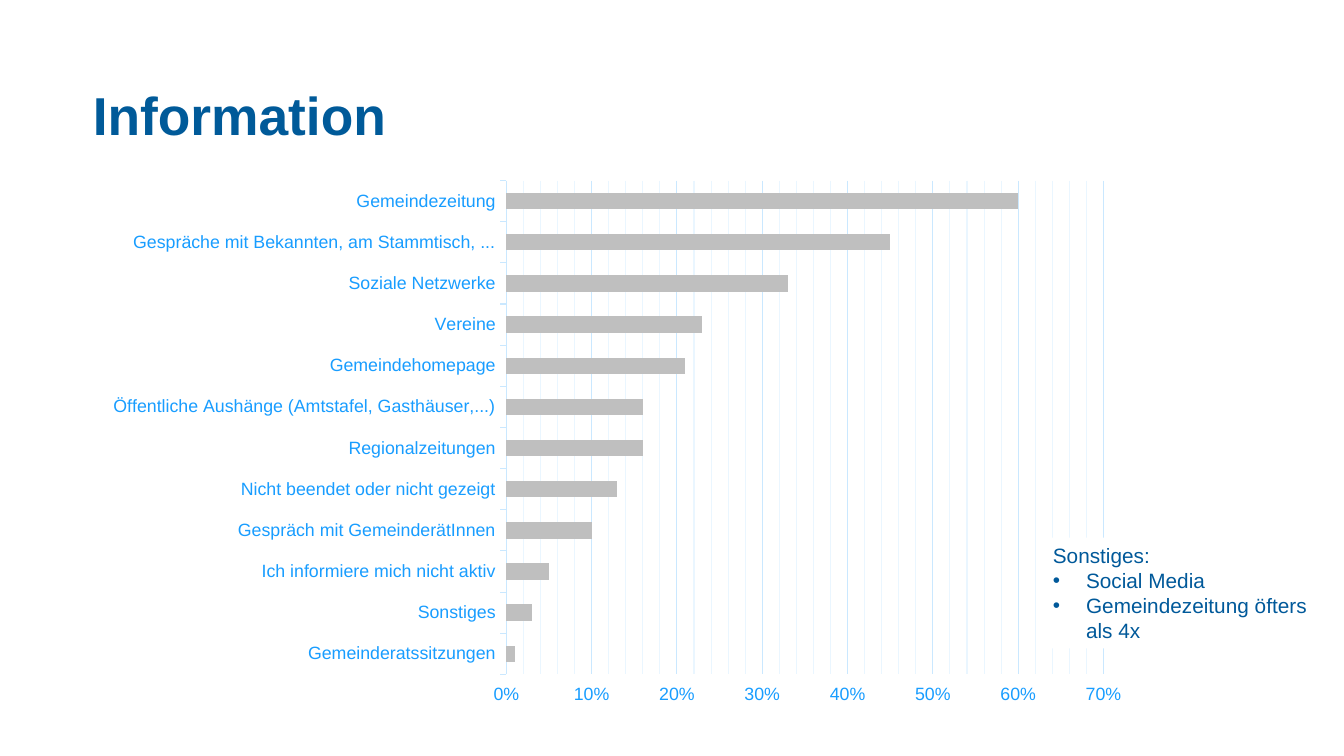
from lxml import etree
from pptx import Presentation
from pptx.chart.data import CategoryChartData
from pptx.dml.color import RGBColor
from pptx.enum.chart import XL_CHART_TYPE, XL_TICK_MARK
from pptx.enum.shapes import MSO_SHAPE
from pptx.enum.text import MSO_ANCHOR, PP_ALIGN
from pptx.oxml import parse_xml
from pptx.oxml.ns import nsdecls, qn
from pptx.util import Cm, Pt

BAR_STACKED = XL_CHART_TYPE.BAR_STACKED
TICK_OUT, TICK_NONE = XL_TICK_MARK.OUTSIDE, XL_TICK_MARK.NONE
RECT = MSO_SHAPE.RECTANGLE
TOP, LEFT = MSO_ANCHOR.TOP, PP_ALIGN.LEFT

FONT = "Arial"
COLORS = {
    "title": "005A99",
    "text": "00599A",
    "axis": "189DFF",
    "grid": "CAE8FF",
    "minor_grid": "EAF6FF",
    "bar": "BFBFBF",
    "white": "FFFFFF",
}

# Information sources from the bottom bar to the top bar
SOURCES = [
    ("Gemeinderatssitzungen", 0.01),
    ("Sonstiges", 0.03),
    ("Ich informiere mich nicht aktiv", 0.05),
    ("Gespräch mit GemeinderätInnen", 0.1),
    ("Nicht beendet oder nicht gezeigt", 0.13),
    ("Regionalzeitungen", 0.16),
    ("Öffentliche Aushänge (Amtstafel, Gasthäuser,...)", 0.16),
    ("Gemeindehomepage", 0.21),
    ("Vereine", 0.23),
    ("Soziale Netzwerke", 0.33),
    ("Gespräche mit Bekannten, am Stammtisch, ...", 0.45),
    ("Gemeindezeitung", 0.6),
]
OTHER_ANSWERS = ["Social Media", "Gemeindezeitung öfters als 4x"]


def rgb(name):
    return RGBColor.from_string(COLORS[name])


def style_font(font, size, color, bold=False):
    font.name = FONT
    font.size = Pt(size)
    font.bold = bold
    font.color.rgb = rgb(color)


def style_line(line, color):
    line.color.rgb = rgb(color)
    line.width = Pt(0.75)


def add_run(p, text, size, color, bold=False):
    r = p.add_run()
    r.text = text
    style_font(r.font, size, color, bold)


def add_bullet(p):
    pPr = p._p.get_or_add_pPr()
    pPr.set("marL", str(Cm(0.79)))
    pPr.set("indent", str(-Cm(0.79)))
    etree.SubElement(pPr, qn("a:buFont")).set("typeface", FONT)
    etree.SubElement(pPr, qn("a:buChar")).set("char", "•")


def add_title(s, text):
    tf = s.shapes.add_textbox(Cm(2.21), Cm(2.13), Cm(19.56), Cm(1.35)).text_frame
    tf.word_wrap = True
    tf.margin_left = tf.margin_right = tf.margin_top = tf.margin_bottom = 0
    p = tf.paragraphs[0]
    p.line_spacing = Pt(38)
    add_run(p, text, 36, "title", bold=True)


def set_plot_layout(chart, x, y, w, h):
    plot_area = chart._chartSpace.chart.plotArea
    for layout in plot_area.findall(qn("c:layout")):
        plot_area.remove(layout)
    plot_area.insert(0, parse_xml(
        f'<c:layout {nsdecls("c")}><c:manualLayout><c:layoutTarget val="inner"/>'
        '<c:xMode val="edge"/><c:yMode val="edge"/>'
        f'<c:x val="{x}"/><c:y val="{y}"/><c:w val="{w}"/><c:h val="{h}"/>'
        '</c:manualLayout></c:layout>'))


def style_minor_gridlines(axis, color):
    axis.has_minor_gridlines = True
    gridlines = axis._element.find(qn("c:minorGridlines"))
    gridlines.append(parse_xml(
        f'<c:spPr {nsdecls("c", "a")}><a:ln w="{Pt(0.75)}"><a:solidFill>'
        f'<a:srgbClr val="{COLORS[color]}"/></a:solidFill></a:ln></c:spPr>'))


def add_sources_chart(s):
    data = CategoryChartData(number_format="0%")
    data.categories = [name for name, _ in SOURCES]
    data.add_series("Series 1", [share for _, share in SOURCES])
    chart = s.shapes.add_chart(
        BAR_STACKED, Cm(2.21), Cm(4.04), Cm(24.99), Cm(12.98), data).chart
    chart.has_legend = False
    chart.has_title = False
    style_font(chart.font, 10, "text")
    set_plot_layout(chart, 0.394, 0.02, 0.569, 0.906)

    # Bars
    plot = chart.plots[0]
    plot.vary_by_categories = False
    plot.gap_width = 150
    plot.overlap = 100
    fill = plot.series[0].format.fill
    fill.solid()
    fill.fore_color.rgb = rgb("bar")

    # Axes
    cat_axis, val_axis = chart.category_axis, chart.value_axis
    for axis in (cat_axis, val_axis):
        axis.major_tick_mark = TICK_OUT
        axis.minor_tick_mark = TICK_NONE
        style_font(axis.tick_labels.font, 12, "axis")
    style_line(cat_axis.format.line, "grid")
    val_axis.format.line.fill.background()
    val_axis.tick_labels.number_format = "0%"
    val_axis.tick_labels.number_format_is_linked = False
    val_axis.minimum_scale, val_axis.maximum_scale = 0, 0.7
    val_axis.major_unit, val_axis.minor_unit = 0.1, 0.02

    # Gridlines
    val_axis.has_major_gridlines = True
    style_line(val_axis.major_gridlines.format.line, "grid")
    style_minor_gridlines(val_axis, "minor_grid")


def add_note(s, heading, items):
    sp = s.shapes.add_shape(RECT, Cm(24.82), Cm(12.8), Cm(6.6), Cm(2.64))
    sp.shadow.inherit = False
    sp.fill.solid()
    sp.fill.fore_color.rgb = rgb("white")
    sp.line.fill.background()
    tf = sp.text_frame
    tf.word_wrap = True
    tf.vertical_anchor = TOP
    p = tf.paragraphs[0]
    p.alignment = LEFT
    add_run(p, heading, 14, "text")
    for item in items:
        p = tf.add_paragraph()
        p.alignment = LEFT
        add_bullet(p)
        add_run(p, item, 14, "text")


def main():
    prs = Presentation()
    prs.slide_width, prs.slide_height = Cm(32), Cm(18)
    s = prs.slides.add_slide(prs.slide_layouts[6])
    add_title(s, "Information")
    add_sources_chart(s)
    add_note(s, "Sonstiges:", OTHER_ANSWERS)
    prs.save("out.pptx")


if __name__ == "__main__":
    main()
